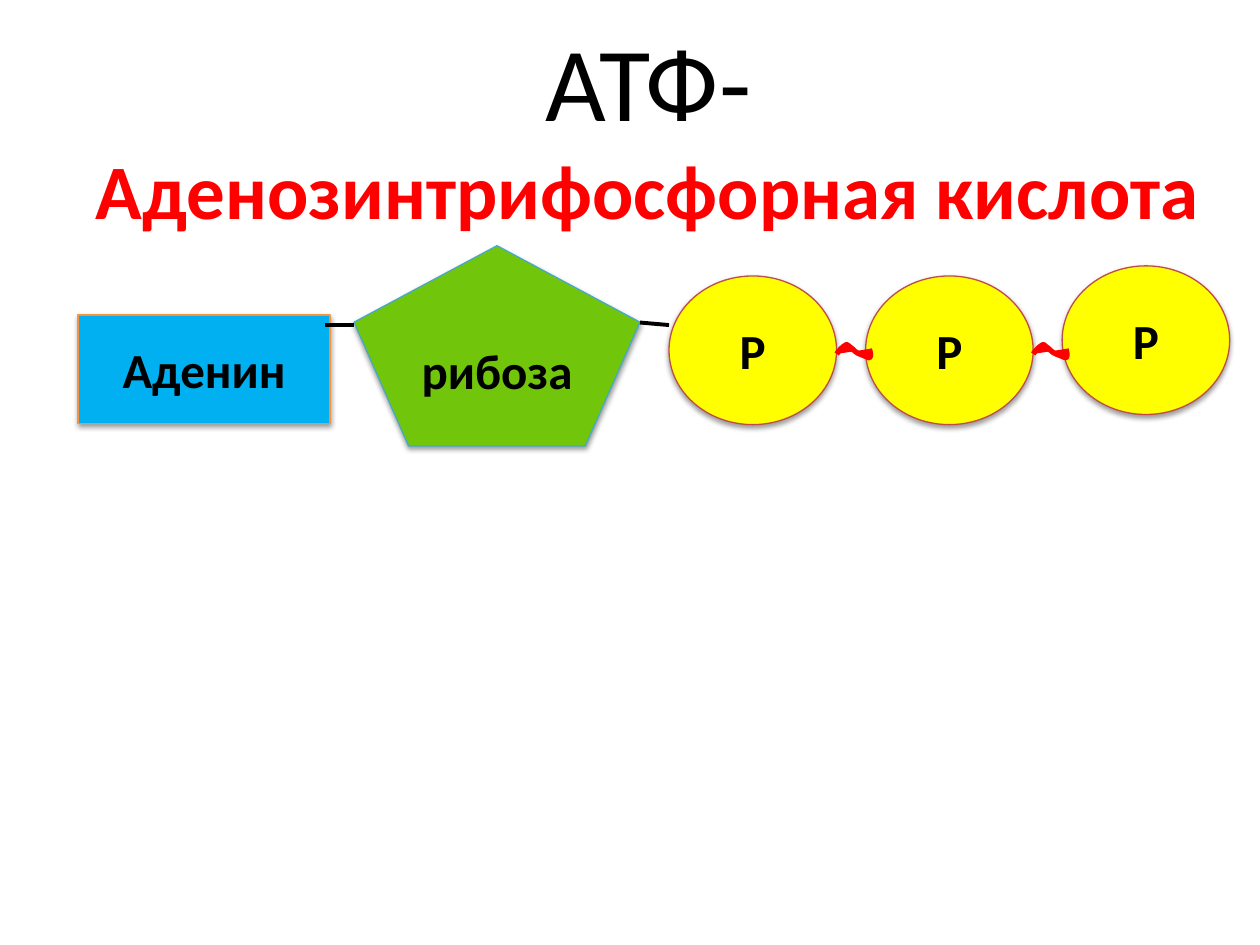
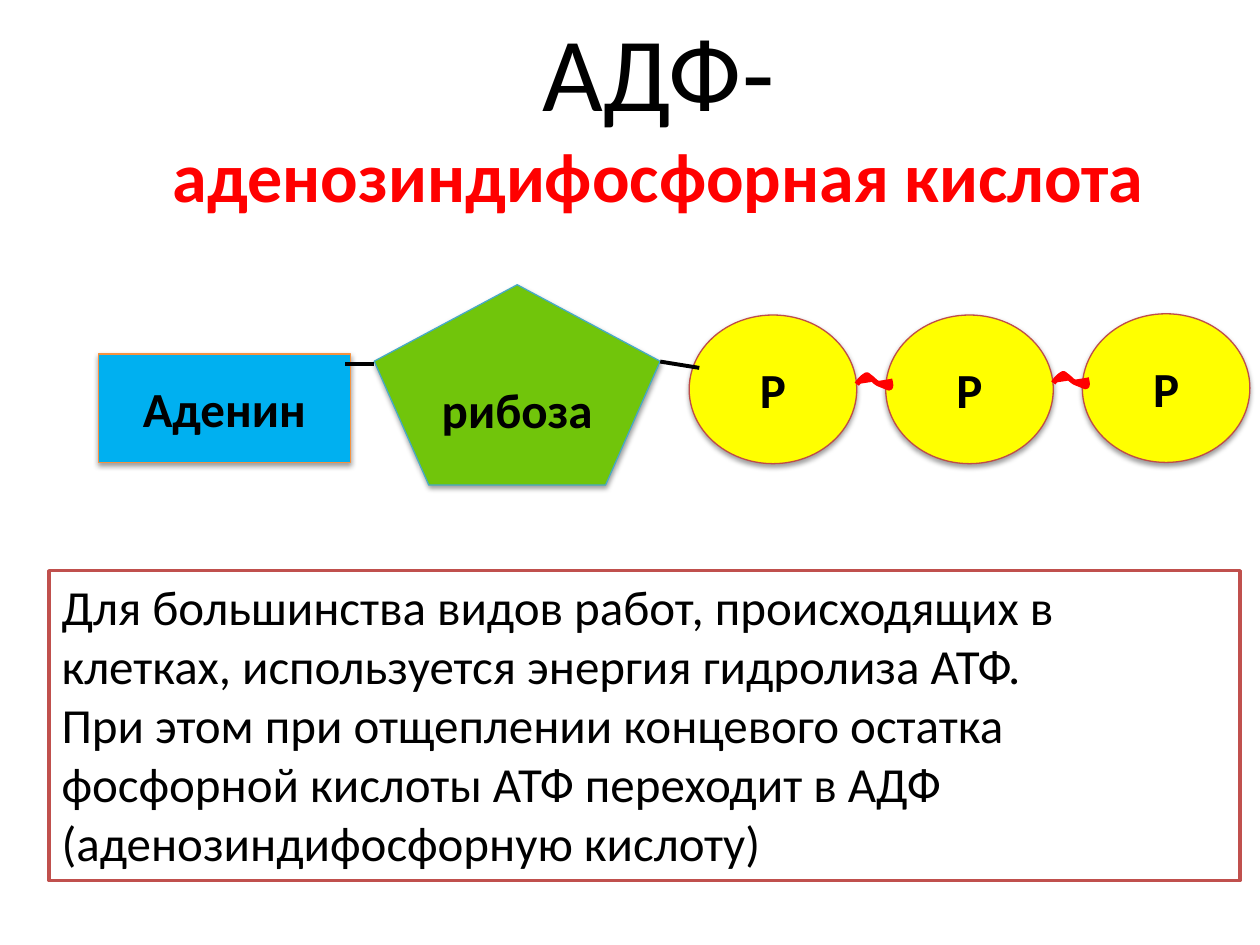
import dataclasses

import pptx
import pptx.dml.color
import pptx.enum.shapes
import pptx.enum.text
import pptx.oxml
import pptx.oxml.ns
import pptx.util

Inches = pptx.util.Inches
Pt = pptx.util.Pt
Shape = pptx.enum.shapes.MSO_SHAPE
Align = pptx.enum.text.PP_ALIGN
Anchor = pptx.enum.text.MSO_ANCHOR


@dataclasses.dataclass(frozen=True)
class Theme:
    """Colours, font and type sizes shared by the slides."""
    font: str = "Calibri"
    black: str = "000000"
    white: str = "FFFFFF"
    red: str = "FF0000"
    adenine: str = "00B0F0"
    adenine_edge: str = "F69240"
    ribose: str = "71C50B"
    ribose_edge: str = "46AAC5"
    phosphate: str = "FFFF00"
    phosphate_edge: str = "BF4C48"
    note_edge: str = "C0504D"
    heading_size: int = 60
    text_size: int = 28
    thin: float = 0.75
    note_line: float = 2
    bond: float = 2.25
    wave: float = 3


THEME = Theme()
PHOSPHATE_STEP = 1.56
WAVE_START = (0, 0.08)
WAVE_CURVES = (
    ((0.02, 0.05), (0.05, 0.02), (0.07, 0.01)),
    ((0.08, 0), (0.09, 0.01), (0.1, 0.02)),
    ((0.12, 0.03), (0.15, 0.07), (0.18, 0.08)),
    ((0.21, 0.09), (0.25, 0.11), (0.26, 0.11)),
    ((0.28, 0.1), (0.26, 0.04), (0.26, 0.04)),
)


def rgb(color):
    """Turn a hex string into a colour."""
    return pptx.dml.color.RGBColor.from_string(color)


def write(para, text, *, size=THEME.text_size, color=THEME.black, bold=False, align=Align.CENTER):
    """Write formatted text into a paragraph."""
    para.alignment = align
    span = para.add_run()
    span.text = text
    span.font.name = THEME.font
    span.font.size = Pt(size)
    span.font.bold = bold
    span.font.color.rgb = rgb(color)


def paint(shape, fill, edge, width):
    """Set a flat fill and outline without a shadow."""
    shape.shadow.inherit = False
    shape.fill.solid()
    shape.fill.fore_color.rgb = rgb(fill)
    shape.line.color.rgb = rgb(edge)
    shape.line.width = Pt(width)


def add_shadow(shape):
    """Give a shape a soft shadow below it."""
    effects = shape._element.spPr.find(pptx.oxml.ns.qn("a:effectLst"))
    effects.append(pptx.oxml.parse_xml(
        f'<a:outerShdw {pptx.oxml.ns.nsdecls("a")} blurRad="{Pt(3.1)}" dist="{Pt(1.6)}" '
        f'dir="5400000" rotWithShape="0"><a:srgbClr val="{THEME.black}">'
        '<a:alpha val="38000"/></a:srgbClr></a:outerShdw>'))


def add_part(page, kind, label, bounds, fill, edge):
    """Add one labelled part of the molecule."""
    part = page.shapes.add_shape(kind, *map(Inches, bounds))
    paint(part, fill, edge, THEME.thin)
    add_shadow(part)
    part.text_frame.vertical_anchor = Anchor.MIDDLE
    write(part.text_frame.paragraphs[0], label, bold=True)


def add_bond(page, start, end):
    """Add a plain black bond between two points."""
    bond = page.shapes.add_connector(
        pptx.enum.shapes.MSO_CONNECTOR.STRAIGHT, *map(Inches, (*start, *end)))
    bond.line.color.rgb = rgb(THEME.black)
    bond.line.width = Pt(THEME.bond)
    bond._element.spPr.append(pptx.oxml.parse_xml(
        f'<a:effectLst {pptx.oxml.ns.nsdecls("a")}/>'))


def bezier(start, first, second, end, steps=6):
    """Return points along a cubic curve, without its start."""
    points = []
    for step in range(1, steps + 1):
        t = step / steps
        weights = ((1 - t) ** 3, 3 * t * (1 - t) ** 2, 3 * t * t * (1 - t), t ** 3)
        points.append(tuple(
            sum(weight * value for weight, value in zip(weights, values))
            for values in zip(start, first, second, end)))
    return points


def add_wave(page, left, top):
    """Add a red wavy high-energy bond."""
    points = [WAVE_START]
    for curve in WAVE_CURVES:
        points += bezier(points[-1], *curve)
    corners = [(Inches(left + x), Inches(top + y)) for x, y in points]
    builder = page.shapes.build_freeform(*corners[0])
    builder.add_line_segments(corners[1:], close=False)
    paint(builder.convert_to_shape(), THEME.red, THEME.red, THEME.wave)


def add_molecule(page, left, top, *, last_drop, bond_end, wave_drops):
    """Add adenine, ribose and three phosphates joined by bonds."""
    add_part(page, Shape.RECTANGLE, "Аденин", (left, top + 0.55, 2, 0.86),
             THEME.adenine, THEME.adenine_edge)
    add_part(page, Shape.REGULAR_PENTAGON, "рибоза", (left + 2.19, top, 2.27, 1.59),
             THEME.ribose, THEME.ribose_edge)
    for index, drop in enumerate((0.24, 0.24, last_drop)):
        add_part(page, Shape.OVAL, "Р",
                 (left + 4.69 + index * PHOSPHATE_STEP, top + drop, 1.33, 1.18),
                 THEME.phosphate, THEME.phosphate_edge)
    add_bond(page, (left + 1.96, top + 0.63), (left + 2.19, top + 0.63))
    add_bond(page, (left + bond_end[0], top + bond_end[1]), (left + 4.46, top + 0.61))
    for index, drop in enumerate(wave_drops):
        add_wave(page, left + 6.02 + index * PHOSPHATE_STEP, top + drop)


def add_title(page, short_name, full_name, bounds, full_size):
    """Fill the title with the short and full names of the acid."""
    title = page.shapes.title
    title.left, title.top, title.width, title.height = map(Inches, bounds)
    frame = title.text_frame
    frame.vertical_anchor = Anchor.TOP
    frame.auto_size = pptx.enum.text.MSO_AUTO_SIZE.NONE
    frame.word_wrap = False
    write(frame.paragraphs[0], short_name, size=THEME.heading_size)
    write(frame.add_paragraph(), full_name, size=full_size, color=THEME.red, bold=True)


def add_note(page, lines, bounds):
    """Add a framed note with one paragraph per line."""
    note = page.shapes.add_shape(Shape.RECTANGLE, *map(Inches, bounds))
    paint(note, THEME.white, THEME.note_edge, THEME.note_line)
    frame = note.text_frame
    frame.word_wrap = True
    frame.vertical_anchor = Anchor.TOP
    for index, line in enumerate(lines):
        para = frame.add_paragraph() if index else frame.paragraphs[0]
        write(para, line, align=Align.LEFT)


def main():
    """Build the two slides and save the deck."""
    deck = pptx.Presentation()
    deck.slide_width, deck.slide_height = Inches(10), Inches(7.5)
    title_only = deck.slide_layouts.get_by_name("Title Only")

    page = deck.slides.add_slide(title_only)
    add_title(page, "АТФ-", "Аденозинтрифосфорная кислота", (0.62, 0.08, 9.05, 1.85), 44)
    add_molecule(page, 0.62, 1.95, last_drop=0.16, bond_end=(4.69, 0.63),
                 wave_drops=(0.78, 0.78))

    page = deck.slides.add_slide(title_only)
    add_title(page, "АДФ-", "аденозиндифосфорная кислота", (1.23, 0, 7.99, 2.79), 40)
    add_note(page, (
        "Для большинства видов работ, происходящих в клетках, "
        "используется энергия гидролиза АТФ.",
        "При этом при отщеплении концевого остатка фосфорной кислоты "
        "АТФ переходит в АДФ (аденозиндифосфорную кислоту)",
    ), (0.39, 4.53, 9.45, 2.46))
    add_molecule(page, 0.78, 2.26, last_drop=0.23, bond_end=(4.77, 0.66),
                 wave_drops=(0.71, 0.7))

    deck.save("out.pptx")


if __name__ == "__main__":
    main()
